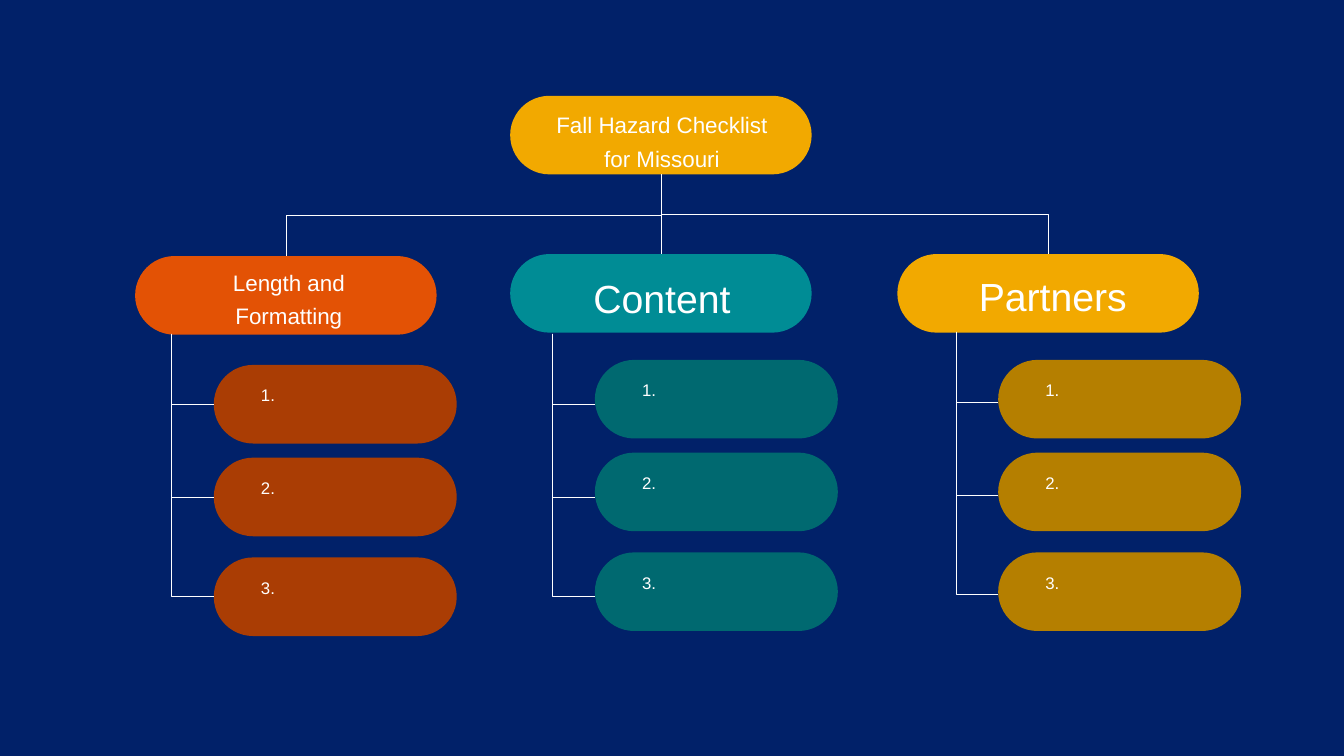
from pptx import Presentation
from pptx.dml.color import RGBColor
from pptx.enum.shapes import MSO_CONNECTOR as Link, MSO_SHAPE as Form
from pptx.enum.text import MSO_ANCHOR as Anchor, MSO_AUTO_SIZE as Auto, PP_ALIGN as Align
from pptx.oxml.ns import qn
from pptx.util import Inches, Pt
from lxml.etree import SubElement

NAVY = RGBColor(0x01, 0x21, 0x69)
WHITE = RGBColor(0xFF, 0xFF, 0xFF)
GOLD = RGBColor(0xF2, 0xA9, 0x00)
OCHRE = RGBColor(0xB5, 0x7F, 0x00)
ORANGE = RGBColor(0xE3, 0x52, 0x05)
RUST = RGBColor(0xAA, 0x3D, 0x04)
TEAL = RGBColor(0x00, 0x8C, 0x95)
PINE = RGBColor(0x00, 0x69, 0x70)

HEAD_W, ITEM_W, PILL_H = 2.99, 2.41, 0.78
MID = 1.5
ROOT_X, ROOT_Y = 5.06, 0.95
FORK_X, FORK_Y = ROOT_X + MID, 1.73
STEPS = (0, 0.92, 1.91)

# label, size, alignment, label box, head place, first item place, first rung, colours
BRANCHES = [
    ("Length and Formatting", 16, Align.CENTER, (1.7, 2.55, 2.33, 0.74),
     (1.34, 2.54), (2.12, 3.62), 4.01, ORANGE, RUST),
    ("Content", 28, Align.CENTER, (5.7, 2.56, 1.73, 0.63),
     (5.06, 2.52), (5.9, 3.57), 4.01, TEAL, PINE),
    ("Partners", 28, Align.LEFT, (9.61, 2.54, 1.8, 0.63),
     (8.9, 2.52), (9.9, 3.57), 3.99, GOLD, OCHRE),
]


def apply(obj, **style):
    for key, val in style.items():
        setattr(obj, key, val)


class Chart:
    """Holds the text and line style and the slide being drawn."""

    font = {"name": "Arial", "bold": False}
    frame = {"word_wrap": True, "auto_size": Auto.SHAPE_TO_FIT_TEXT,
             "vertical_anchor": Anchor.TOP}
    para = {"line_spacing": 1.25, "space_before": Pt(0), "space_after": Pt(0)}

    def __init__(self, slide):
        self.slide = slide
        self.shapes = slide.shapes
        back = slide.background.fill
        back.solid()
        back.fore_color.rgb = NAVY

    def pill(self, x, y, width, color):
        box = self.shapes.add_shape(Form.ROUNDED_RECTANGLE, Inches(x), Inches(y),
                                    Inches(width), Inches(PILL_H))
        box.adjustments[0] = 0.5
        box.shadow.inherit = False
        box.fill.solid()
        box.fill.fore_color.rgb = color
        box.line.fill.background()
        return box

    def fit(self, box, text, size, align):
        """Set the text of a box in the common style."""
        apply(box.text_frame, text=text, **self.frame)
        para = box.text_frame.paragraphs[0]
        apply(para, alignment=align, **self.para)
        font = para.runs[0].font
        apply(font, size=Pt(size), **self.font)
        font.color.rgb = WHITE

    def label(self, text, place, size, align=Align.LEFT):
        box = self.shapes.add_textbox(*map(Inches, place))
        self.fit(box, text, size, align)

    def title(self, text, place, size):
        """Put the title placeholder in place, above the shapes drawn so far."""
        box = self.shapes.title
        apply(box, **dict(zip(("left", "top", "width", "height"), map(Inches, place))))
        self.fit(box, text, size, Align.CENTER)
        self.shapes._spTree.append(box._element)

    def link(self, kind, *ends):
        line = self.shapes.add_connector(kind, *map(Inches, ends))
        line.line.color.rgb = WHITE
        line.line.width = Pt(0.5)
        SubElement(line._element.spPr, qn("a:effectLst"))
        return line

    def join(self, top, low):
        line = self.link(Link.STRAIGHT, FORK_X, FORK_Y, FORK_X, FORK_Y)
        line.begin_connect(top, 2)
        line.end_connect(low, 0)

    def bend(self, x1, y1, x2, y2, form):
        """Elbow that leaves downwards: a flat one turned about its centre."""
        run, drop = abs(x2 - x1), y2 - y1
        x, y = (x1 + x2 - drop) / 2, (y1 + y2 - run) / 2
        line = self.link(Link.ELBOW, x, y, x + drop, y + run)
        props = line._element.spPr
        props.find(qn("a:prstGeom")).set("prst", form)
        turn = props.find(qn("a:xfrm"))
        turn.set("rot", str((270 if x2 > x1 else 90) * 60000))
        if x2 > x1:
            turn.set("flipH", "1")


def main():
    deck = Presentation()
    apply(deck, slide_width=Inches(13.33), slide_height=Inches(7.5))
    chart = Chart(deck.slides.add_slide(deck.slide_layouts[5]))

    root = chart.pill(ROOT_X, ROOT_Y, HEAD_W, GOLD)
    chart.title("Fall Hazard Checklist for Missouri", (5.32, 0.99, 2.49, 0.74), 16)

    for text, size, align, place, (hx, hy), (x, y), rung, color, shade in BRANCHES:
        head = chart.pill(hx, hy, HEAD_W, color)
        chart.label(text, place, size, align)
        if hx == ROOT_X:
            chart.join(root, head)
        else:
            chart.bend(FORK_X, FORK_Y, hx + MID, hy, "bentConnector3")
        for num, step in enumerate(STEPS, 1):
            chart.pill(x, y + step, ITEM_W, shade)
            chart.label(f"{num}.", (x + 0.37, y + step + 0.1, 1.54, 0.33), 12)
            chart.bend(x - 0.42, rung - 0.7, x, rung + step, "bentConnector2")

    deck.save("out.pptx")


if __name__ == "__main__":
    main()
